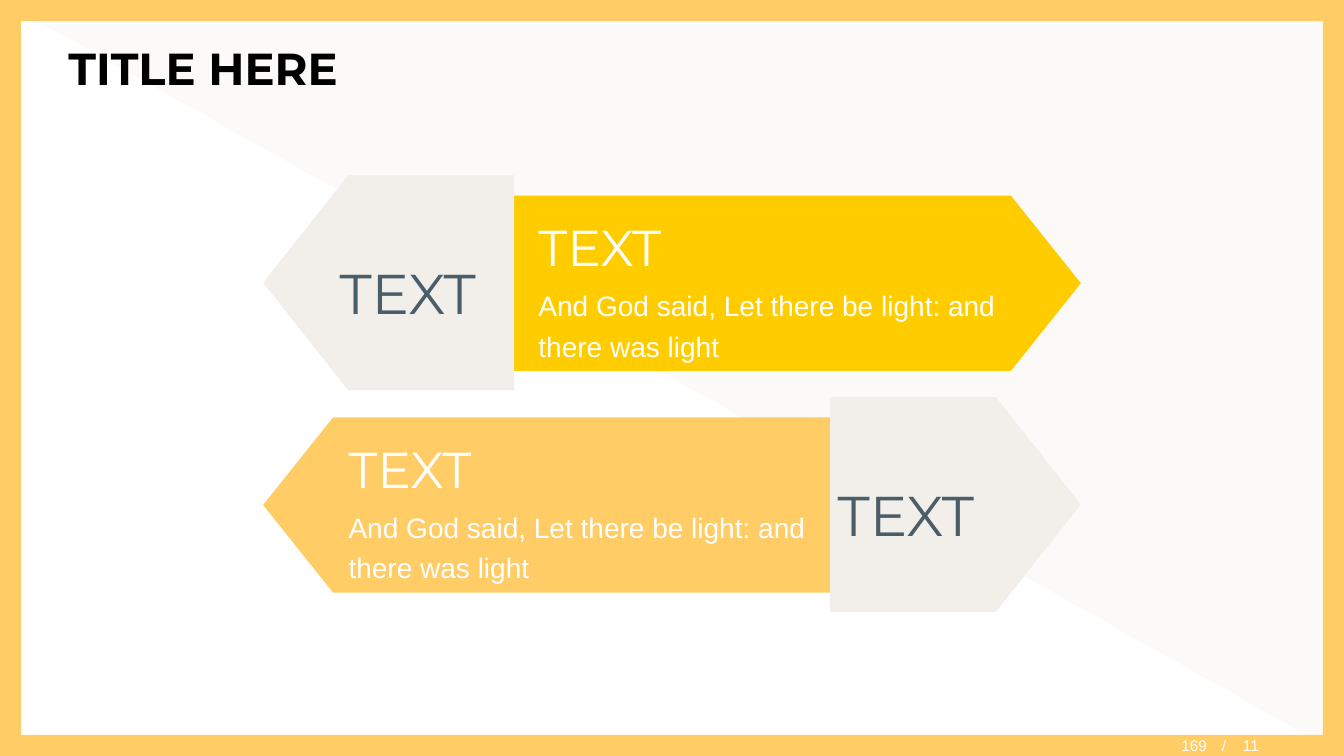
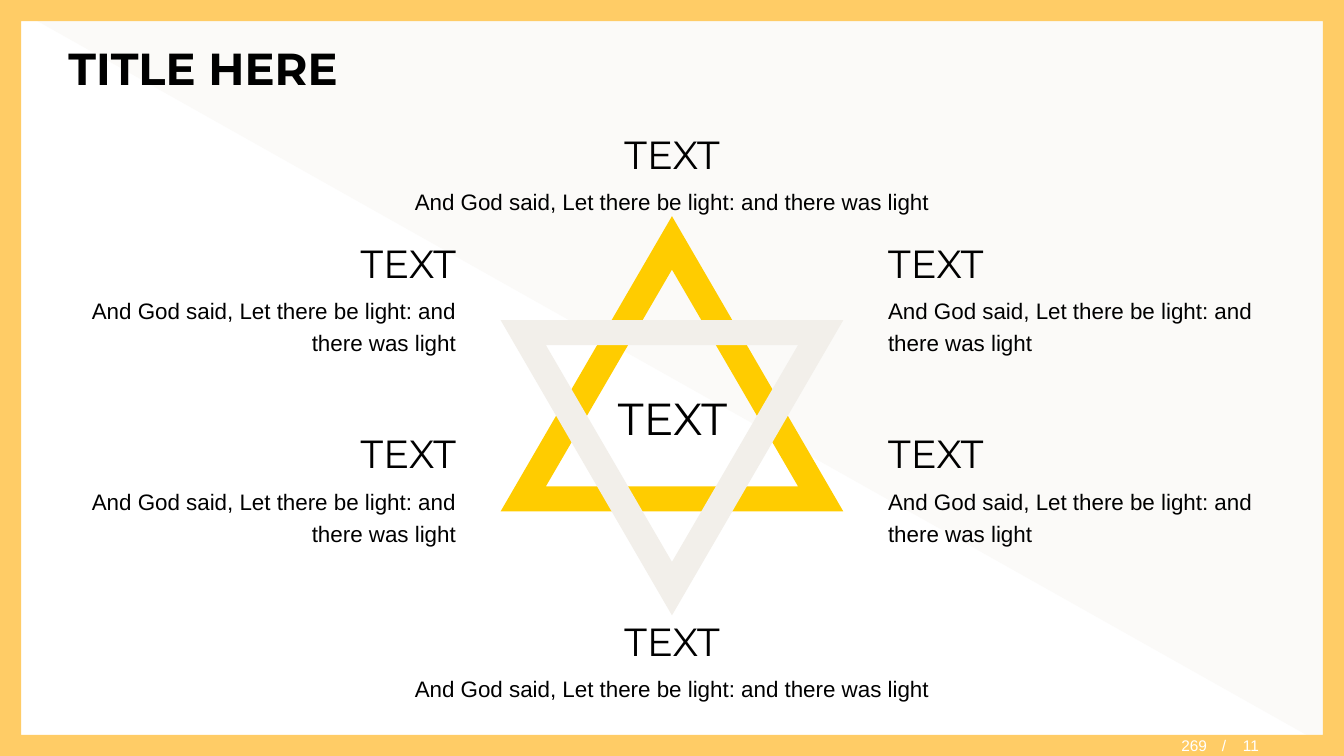
from dataclasses import dataclass

from pptx import Presentation
from pptx.dml.color import RGBColor
from pptx.enum.shapes import MSO_SHAPE
from pptx.enum.text import MSO_ANCHOR, PP_ALIGN
from pptx.util import Inches, Pt


@dataclass(frozen=True)
class Theme:
    black: str = "000000"
    white: str = "FFFFFF"
    slate: str = "4A5D69"
    yellow: str = "FFCC00"
    amber: str = "FFCC66"
    stone: str = "F2EFEA"
    wash: str = "FBFAF8"
    heading_font: str = "Montserrat"
    body_font: str = "Arial"
    title_size: int = 32
    banner_size: int = 36
    banner_body_size: int = 20
    label_size: int = 40
    caption_size: int = 28
    caption_body_size: int = 16
    center_size: int = 32
    footer_size: int = 11


theme = Theme()
WIDTH, HEIGHT = 13.33, 7.5
VERSE = "And God said, Let there be light: and there was light"
TOTAL = "11"


def add_figure(slide, preset, box, color, adjustment=None, rotation=0, mirrored=False):
    shape = slide.shapes.add_shape(preset, *map(Inches, box))
    shape.shadow.inherit = False
    shape.fill.solid()
    shape.fill.fore_color.rgb = RGBColor.from_string(color)
    shape.line.fill.background()
    shape.rotation = rotation
    if adjustment is not None:
        shape.adjustments[0] = adjustment
    if mirrored:
        shape._element.spPr.xfrm.set("flipH", "1")
    return shape


def add_text(slide, lines, box=None, shape=None, color=theme.black, bold=False,
             align=PP_ALIGN.LEFT, anchor=MSO_ANCHOR.TOP, spaced=True, left_margin=0.1):
    shape = shape or slide.shapes.add_textbox(*map(Inches, box))
    frame = shape.text_frame
    frame.word_wrap = True
    frame.vertical_anchor = anchor
    frame.margin_left = Inches(left_margin)
    for index, (text, font, size) in enumerate(lines):
        paragraph = frame.add_paragraph() if index else frame.paragraphs[0]
        paragraph.alignment = align
        if spaced:
            paragraph.line_spacing = 1.2
            paragraph.space_before = paragraph.space_after = Pt(2)
        run = paragraph.add_run()
        run.text = text
        run.font.name = font
        run.font.size = Pt(size)
        run.font.bold = bold
        run.font.color.rgb = RGBColor.from_string(color)


presentation = Presentation()
presentation.slide_width = Inches(WIDTH)
presentation.slide_height = Inches(HEIGHT)

slides = []
for number in ("169", "269"):
    slide = presentation.slides.add_slide(presentation.slide_layouts[6])
    full = (0, 0, WIDTH, HEIGHT)
    add_figure(slide, MSO_SHAPE.RIGHT_TRIANGLE, full, theme.wash, rotation=180)
    add_figure(slide, MSO_SHAPE.FRAME, full, theme.amber, adjustment=0.028)
    add_text(slide, [("TITLE HERE", theme.heading_font, theme.title_size)],
             box=(0.58, 0.28, 12.18, 0.79), bold=True,
             anchor=MSO_ANCHOR.MIDDLE, spaced=False)
    for text, left, width, align in (
        (number, 9.48, 2.59, PP_ALIGN.RIGHT),
        ("/", 12.02, 0.3, PP_ALIGN.LEFT),
        (TOTAL, 12.23, 0.6, PP_ALIGN.LEFT),
    ):
        add_text(slide, [(text, theme.body_font, theme.footer_size)],
                 box=(left, 7.3, width, 0.18), color=theme.white, align=align,
                 anchor=MSO_ANCHOR.MIDDLE, spaced=False)
    slides.append(slide)

banner_slide, star_slide = slides

banner_lines = [("TEXT", theme.heading_font, theme.banner_size),
                (VERSE, theme.body_font, theme.banner_body_size)]
for top, banner_left, tag_left, label_left, color, points_left in (
    (1.74, 4.84, 2.61, 3.27, theme.yellow, False),
    (3.94, 2.61, 8.23, 8.21, theme.amber, True),
):
    banner = add_figure(banner_slide, MSO_SHAPE.PENTAGON,
                        (banner_left, top + 0.2, 5.88, 1.74), color,
                        adjustment=0.399, mirrored=points_left)
    add_text(banner_slide, banner_lines, shape=banner, color=theme.white,
             anchor=MSO_ANCHOR.MIDDLE, left_margin=0.5)
    add_figure(banner_slide, MSO_SHAPE.PENTAGON, (tag_left, top, 2.49, 2.13),
               theme.stone, adjustment=0.396, mirrored=not points_left)
    add_text(banner_slide, [("TEXT", theme.heading_font, theme.label_size)],
             box=(label_left, top + 0.64, 1.85, 0.91), color=theme.slate)

STAR_X = WIDTH / 2
STAR_Y = 4.125
for direction, color in ((1, theme.yellow), (-1, theme.stone)):
    inner, outer = (
        [(Inches(STAR_X + x), Inches(STAR_Y + direction * y))
         for x, y in ((0, apex), (half_width, base), (-half_width, base))]
        for apex, half_width, base in ((-1.45, 1.25, 0.7), (-1.98, 1.7, 0.95))
    )
    builder = star_slide.shapes.build_freeform(*inner[0])
    builder.add_line_segments(inner[:0:-1], close=True)
    builder.move_to(*outer[0])
    builder.add_line_segments(outer[1:], close=True)
    triangle = builder.convert_to_shape()
    triangle.shadow.inherit = False
    triangle.fill.solid()
    triangle.fill.fore_color.rgb = RGBColor.from_string(color)
    triangle.line.fill.background()

caption_lines = [("TEXT", theme.heading_font, theme.caption_size),
                 (VERSE, theme.body_font, theme.caption_body_size)]
caption_boxes = [((3.53, top, 6.27, 1.05), PP_ALIGN.CENTER) for top in (1.15, 5.98)]
caption_boxes += [((left, top, 4.04, 1.37), align)
                  for left, align in ((0.58, PP_ALIGN.RIGHT), (8.71, PP_ALIGN.LEFT))
                  for top in (2.23, 4.12)]
for box, align in caption_boxes:
    add_text(star_slide, caption_lines, box=box, align=align)
add_text(star_slide, [("TEXT", theme.heading_font, theme.center_size)],
         box=(5.91, 3.72, 1.52, 0.75), align=PP_ALIGN.CENTER)

presentation.save("out.pptx")
